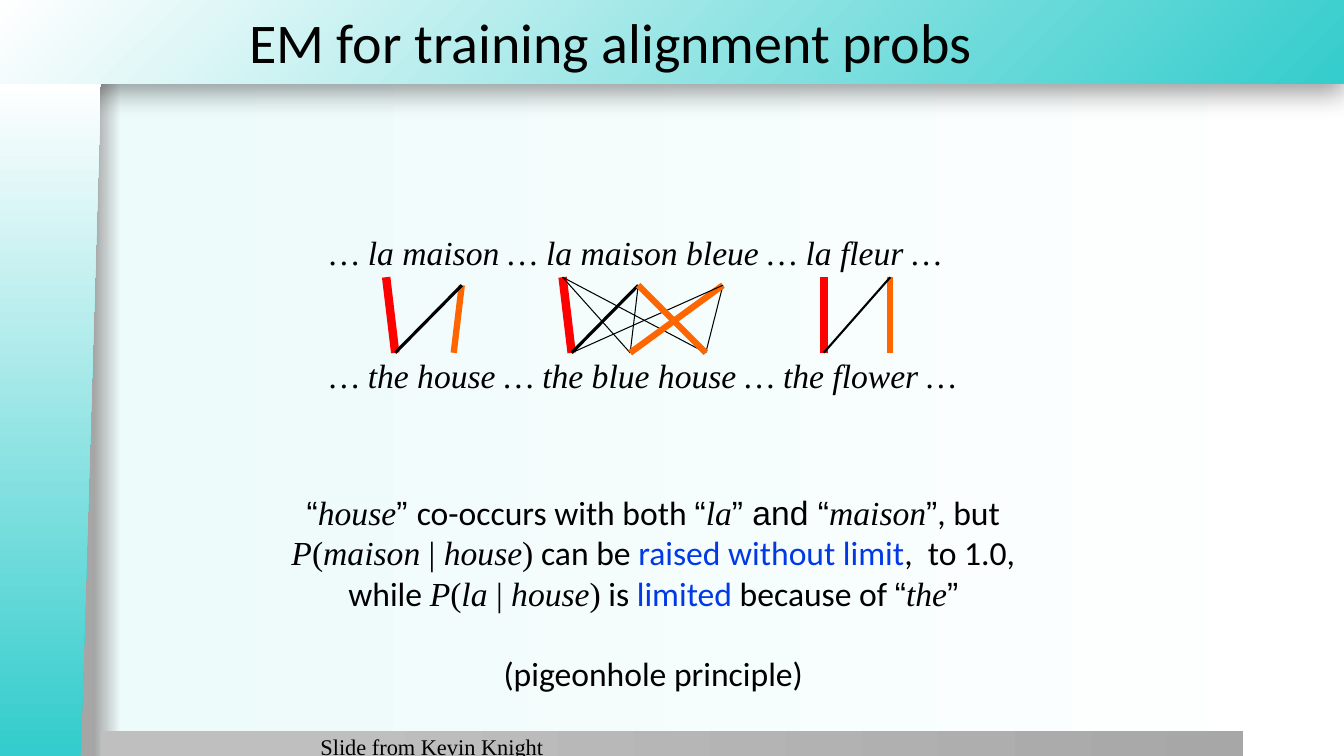
from lxml.etree import SubElement
from pptx import Presentation
from pptx.dml.color import RGBColor
from pptx.enum.shapes import MSO_CONNECTOR, MSO_SHAPE
from pptx.enum.text import MSO_ANCHOR, MSO_AUTO_SIZE, PP_ALIGN
from pptx.oxml.ns import qn
from pptx.util import Emu, Pt

PX = 9144  # 100 px to the inch
TEAL, WHITE, BLACK, BLUE = "34CCCC", "FFFFFF", "000000", "0039E5"
RED, ORANGE = "FF0000", "FF6600"
SERIF, SANS, QUOTE = "Times New Roman", "Calibri", "Arial"

# Run styles: font, italic, colour
WORD = (SERIF, True, BLACK)
MATH = (SERIF, False, BLACK)
PLAIN = (SANS, False, BLACK)
MARK = (QUOTE, False, BLACK)
KEY = (SANS, False, BLUE)

# Link styles: colour, width in points
STRONG, GOOD, FAIR, WEAK, FAINT = (
    (RED, 6), (ORANGE, 4.5), (BLACK, 2.25), (BLACK, 1.5), (BLACK, 0.75))

# Each phrase pair: French anchors, English anchors, links between their indexes
PHRASES = [
    ([(383, 275), (458, 283)], [392, 450],
     [(0, 0, STRONG), (1, 1, GOOD), (1, 0, FAIR)]),
    ([(817, 275), (883, 275)], [817, 883],
     [(0, 0, STRONG), (1, 1, GOOD), (1, 0, WEAK)]),
    ([(558, 275), (633, 283), (717, 283)], [567, 625, 700],
     [(0, 0, STRONG), (0, 1, FAINT), (1, 1, FAINT), (1, 0, FAIR), (0, 2, FAINT),
      (2, 2, FAINT), (2, 1, GOOD), (2, 0, FAINT), (1, 2, GOOD)]),
]
ENGLISH_TOP = 350

CORPUS = [
    [("… la maison … la maison bleue … la fleur …", WORD)],
    [("… the house … the blue house … the flower …", WORD)],
]


def probability(word):
    """Runs that spell P(word | house)."""
    return [("P", WORD), ("(", MATH), (word, WORD), (" | ", MATH),
            ("house", WORD), (")", MATH)]


EXPLANATION = [
    [("“", MARK), ("house", WORD), ("” ", MARK), ("co-occurs with both ", PLAIN),
     ("“", MARK), ("la", WORD), ("” and “", MARK), ("maison", WORD),
     ("”", MARK), (", but", PLAIN)],
    [*probability("maison"), (" can be ", PLAIN), ("raised without limit", KEY),
     (",  to 1.0,", PLAIN)],
    [("while ", PLAIN), *probability("la"), (" is ", PLAIN), ("limited", KEY),
     (" because of ", PLAIN), ("“", MARK), ("the", WORD), ("”", MARK)],
    [("(pigeonhole principle)", PLAIN)],
]


def px(*lengths):
    return [Emu(length * PX) for length in lengths]


def color(hex_string):
    return RGBColor.from_string(hex_string)


def set_gradient(fill, owner, stops, from_corner=False):
    """Fill with (percent, colour) stops, left to right or from the bottom right corner."""
    fill.gradient()
    gradient = owner.find(".//" + qn("a:gradFill"))
    for child in list(gradient):
        gradient.remove(child)
    stop_list = SubElement(gradient, qn("a:gsLst"))
    for percent, hex_string in stops:
        stop = SubElement(stop_list, qn("a:gs"), pos=str(percent * 1000))
        SubElement(stop, qn("a:srgbClr"), val=hex_string)
    if from_corner:
        path = SubElement(gradient, qn("a:path"), path="circle")
        SubElement(path, qn("a:fillToRect"), l="100000", t="100000")
    else:
        SubElement(gradient, qn("a:lin"), ang="0", scaled="0")


def add_band(page, kind, place, stops, from_corner=False):
    band = page.shapes.add_shape(kind, *px(*place))
    band.shadow.inherit = False
    band.line.fill.background()
    set_gradient(band.fill, band._element.spPr, stops, from_corner)
    return band


def add_drop_shadow(shape):
    effects = shape._element.spPr.find(qn("a:effectLst"))
    shadow = SubElement(effects, qn("a:outerShdw"), blurRad=str(Pt(20)),
                        dist=str(Pt(6)), dir="5400000", algn="t", rotWithShape="0")
    shade = SubElement(shadow, qn("a:srgbClr"), val=BLACK)
    SubElement(shade, qn("a:alpha"), val="40000")


def add_frame(page):
    header = add_band(page, MSO_SHAPE.RECTANGLE, (-1, 0, 1334, 83),
                      [(0, TEAL), (100, WHITE)], from_corner=True)
    add_drop_shadow(header)
    add_band(page, MSO_SHAPE.RECTANGLE, (100, 725, 1133, 26),
             [(20, "BFBFBF"), (100, "A7A7A7")])
    sidebar = add_band(page, MSO_SHAPE.FLOWCHART_MANUAL_INPUT, (-284, 367, 668, 100),
                       [(1, TEAL), (100, WHITE)])
    sidebar.rotation = 270
    sidebar._element.spPr.find(qn("a:xfrm")).set("flipV", "1")


def style_run(span, size, style):
    font, italic, hex_string = style
    span.font.name = font
    span.font.size = Pt(size)
    span.font.italic = italic
    span.font.color.rgb = color(hex_string)


def set_title(page, text):
    title = page.shapes.title
    title.left, title.top, title.width, title.height = px(237, 0, 926, 81)
    frame = title.text_frame
    frame.text = text
    frame.vertical_anchor = MSO_ANCHOR.MIDDLE
    frame.paragraphs[0].alignment = PP_ALIGN.LEFT
    style_run(frame.paragraphs[0].runs[0], 40, PLAIN)
    page.shapes._spTree.append(title._element)  # above the header band


def add_text(page, place, lines, size=24, align=PP_ALIGN.LEFT, last_gap=0):
    """Text box of styled lines, with last_gap points above the last one."""
    box = page.shapes.add_textbox(*px(*place))
    frame = box.text_frame
    frame.word_wrap = False
    frame.auto_size = MSO_AUTO_SIZE.SHAPE_TO_FIT_TEXT
    for index, line in enumerate(lines):
        para = frame.add_paragraph() if index else frame.paragraphs[0]
        para.alignment = align
        for text, style in line:
            span = para.add_run()
            span.text = text
            style_run(span, size, style)
    if last_gap:
        para.space_before = Pt(last_gap)


def add_link(page, start, end, style):
    hex_string, width = style
    link = page.shapes.add_connector(MSO_CONNECTOR.STRAIGHT, *px(*start, *end))
    link.line.color.rgb = color(hex_string)
    link.line.width = Pt(width)
    SubElement(link._element.spPr, qn("a:effectLst"))


def main():
    deck = Presentation()
    deck.slide_width, deck.slide_height = px(1333, 750)
    page = deck.slides.add_slide(deck.slide_layouts[5])
    set_gradient(page.background.fill, page._element,
                 [(7, "A6A6A6"), (9, "EDFBFB"), (100, WHITE)])
    add_frame(page)
    set_title(page, "EM for training alignment probs")
    add_text(page, (317, 225, 648, 172), CORPUS, last_gap=59)
    for french, english, links in PHRASES:
        for source, target, style in links:
            add_link(page, french[source], (english[target], ENGLISH_TOP), style)
    add_text(page, (276, 483, 744, 212), EXPLANATION,
             align=PP_ALIGN.CENTER, last_gap=29)
    add_text(page, (308, 722, 244, 37), [[("Slide from Kevin Knight", MATH)]], size=16)
    deck.save("out.pptx")


if __name__ == "__main__":
    main()
